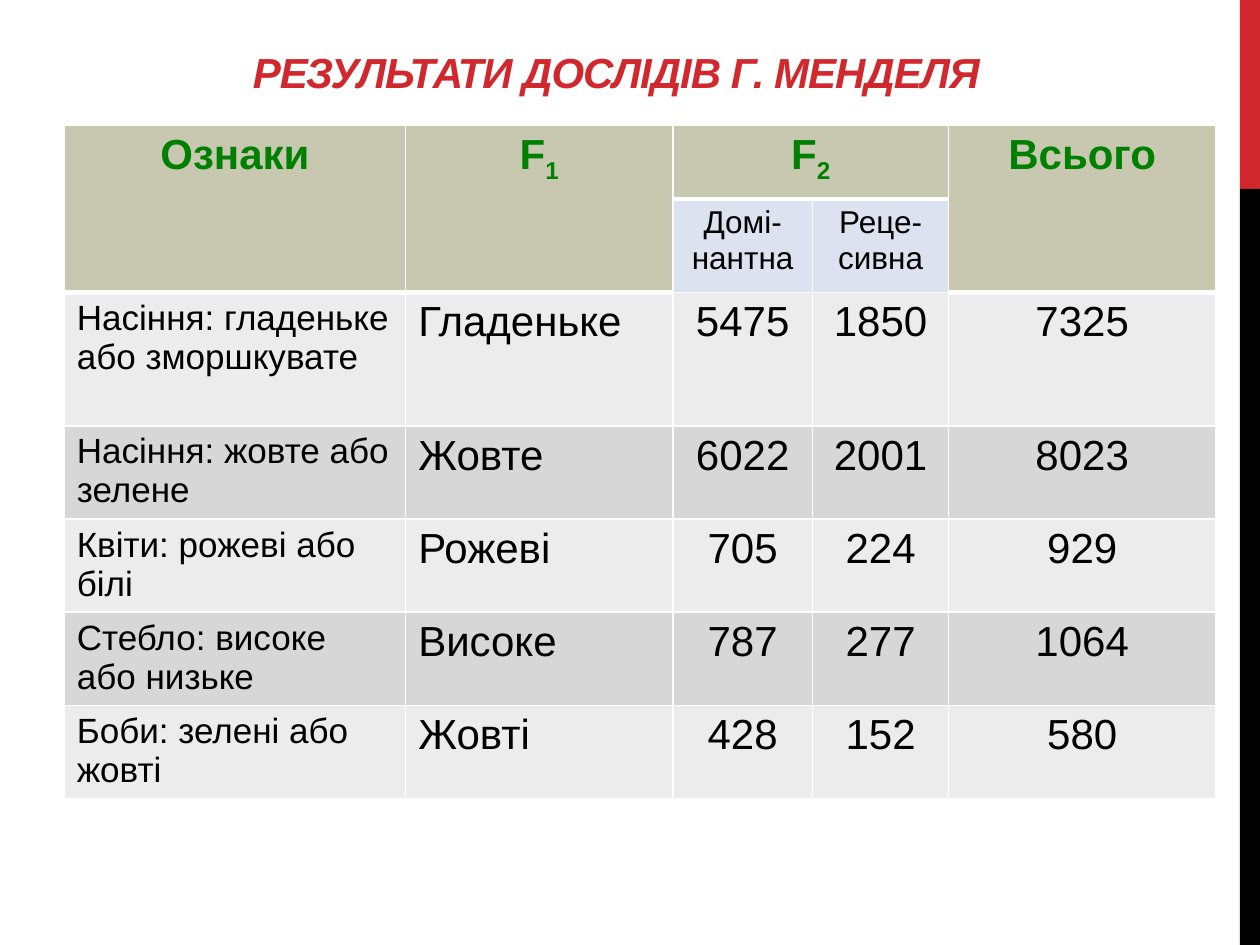
import pptx
import pptx.dml.color
import pptx.enum.shapes
import pptx.enum.text
import pptx.oxml
import pptx.oxml.ns
import pptx.util

Inches = pptx.util.Inches
Pt = pptx.util.Pt
RGBColor = pptx.dml.color.RGBColor
ALIGN = pptx.enum.text.PP_ALIGN

RED = RGBColor(0xD1, 0x28, 0x2E)
BLACK = RGBColor(0, 0, 0)
GREEN = RGBColor(0, 0x80, 0)
OLIVE = RGBColor(0xC8, 0xC8, 0xB1)
PALE_BLUE = RGBColor(0xDC, 0xE2, 0xEF)
BANDS = (RGBColor(0xEC, 0xEC, 0xEC), RGBColor(0xD7, 0xD7, 0xD7))

COLUMN_WIDTHS = (2.71, 2.12, 1.11, 1.08, 2.12)
ROW_HEIGHTS = (0.59, 0.74, 1.06, 0.74, 0.74, 0.74, 0.74)
HEADER_ROWS = 2
HEADERS = (
    (0, "Ознаки", ""),
    (1, "F", "1"),
    (2, "F", "2"),
    (4, "Всього", ""),
)
RESULTS = (
    ("Насіння: гладеньке або зморшкувате", "Гладеньке", "5475", "1850", "7325"),
    ("Насіння: жовте або зелене", "Жовте", "6022", "2001", "8023"),
    ("Квіти: рожеві або білі", "Рожеві", "705", "224", "929"),
    ("Стебло: високе або низьке", "Високе", "787", "277", "1064"),
    ("Боби: зелені або жовті", "Жовті", "428", "152", "580"),
)


def add_span(para, text, size, color=BLACK, bold=False):
    span = para.add_run()
    span.text = text
    span.font.name = "Arial"
    span.font.size = Pt(size)
    span.font.bold = bold
    span.font.color.rgb = color
    return span


def add_bar(page, top, height, color):
    bar = page.shapes.add_shape(
        pptx.enum.shapes.MSO_SHAPE.RECTANGLE,
        Inches(9.84), Inches(top), Inches(0.16), Inches(height))
    bar.shadow.inherit = False
    bar.fill.solid()
    bar.fill.fore_color.rgb = color
    bar.line.fill.background()


def set_title(page, text):
    box = page.shapes.title
    box.left, box.top = Inches(0.28), Inches(-0.11)
    box.width, box.height = Inches(9.22), Inches(1.5)
    frame = box.text_frame
    frame.word_wrap = True
    frame.auto_size = pptx.enum.text.MSO_AUTO_SIZE.NONE
    frame.vertical_anchor = pptx.enum.text.MSO_ANCHOR.BOTTOM
    frame.margin_bottom = Inches(0.62)
    para = frame.paragraphs[0]
    para.alignment = ALIGN.CENTER
    span = add_span(para, text, 24, RED, True)
    span.font.italic = True
    span.font._element.set("spc", "-60")


def set_border(cell, side, width):
    line = pptx.oxml.parse_xml(
        f'<a:{side} {pptx.oxml.ns.nsdecls("a")} w="{Pt(width)}">'
        '<a:solidFill><a:srgbClr val="FFFFFF"/></a:solidFill>'
        f'</a:{side}>')
    cell._tc.get_or_add_tcPr().append(line)


def style_cell(cell, fill, bottom, top=None):
    set_border(cell, "lnL", 1)
    set_border(cell, "lnR", 1)
    if top:
        set_border(cell, "lnT", top)
    set_border(cell, "lnB", bottom)
    cell.fill.solid()
    cell.fill.fore_color.rgb = fill


def write_cell(cell, lines, size, align):
    frame = cell.text_frame
    for index, text in enumerate(lines):
        para = frame.add_paragraph() if index else frame.paragraphs[0]
        para.alignment = align
        add_span(para, text, size)


def fill_header(table):
    for column in range(len(COLUMN_WIDTHS)):
        style_cell(table.cell(0, column), OLIVE, 3, 1)
        under_f2 = column in (2, 3)
        style_cell(table.cell(1, column), PALE_BLUE if under_f2 else OLIVE,
                   1 if under_f2 else 3)
    for column in (0, 1, 4):
        table.cell(0, column).merge(table.cell(1, column))
    table.cell(0, 2).merge(table.cell(0, 3))
    for column, text, subscript in HEADERS:
        para = table.cell(0, column).text_frame.paragraphs[0]
        para.alignment = ALIGN.CENTER
        add_span(para, text, 24, GREEN, True)
        if subscript:
            span = add_span(para, subscript, 24, GREEN, True)
            span.font._element.set("baseline", "-25000")
    write_cell(table.cell(1, 2), ("Домі-", "нантна"), 18, ALIGN.CENTER)
    write_cell(table.cell(1, 3), ("Реце-сивна",), 18, ALIGN.CENTER)


def fill_results(table):
    for index, values in enumerate(RESULTS):
        for column, text in enumerate(values):
            cell = table.cell(HEADER_ROWS + index, column)
            style_cell(cell, BANDS[index % 2], 1)
            write_cell(cell, (text,), 24 if column else 20,
                       ALIGN.CENTER if column > 1 else ALIGN.LEFT)


def add_results_table(page):
    table = page.shapes.add_table(
        len(ROW_HEIGHTS), len(COLUMN_WIDTHS), Inches(0.51), Inches(0.99),
        Inches(sum(COLUMN_WIDTHS)), Inches(sum(ROW_HEIGHTS))).table
    for column, width in zip(table.columns, COLUMN_WIDTHS):
        column.width = Inches(width)
    for row, height in zip(table.rows, ROW_HEIGHTS):
        row.height = Inches(height)
    fill_header(table)
    fill_results(table)


def main():
    deck = pptx.Presentation()
    deck.slide_width, deck.slide_height = Inches(10), Inches(7.5)
    page = deck.slides.add_slide(deck.slide_layouts[5])
    add_bar(page, 0, 1.5, RED)
    add_bar(page, 1.5, 6, BLACK)
    set_title(page, "РЕЗУЛЬТАТИ ДОСЛІДІВ Г. МЕНДЕЛЯ")
    add_results_table(page)
    deck.save("out.pptx")


if __name__ == "__main__":
    main()
